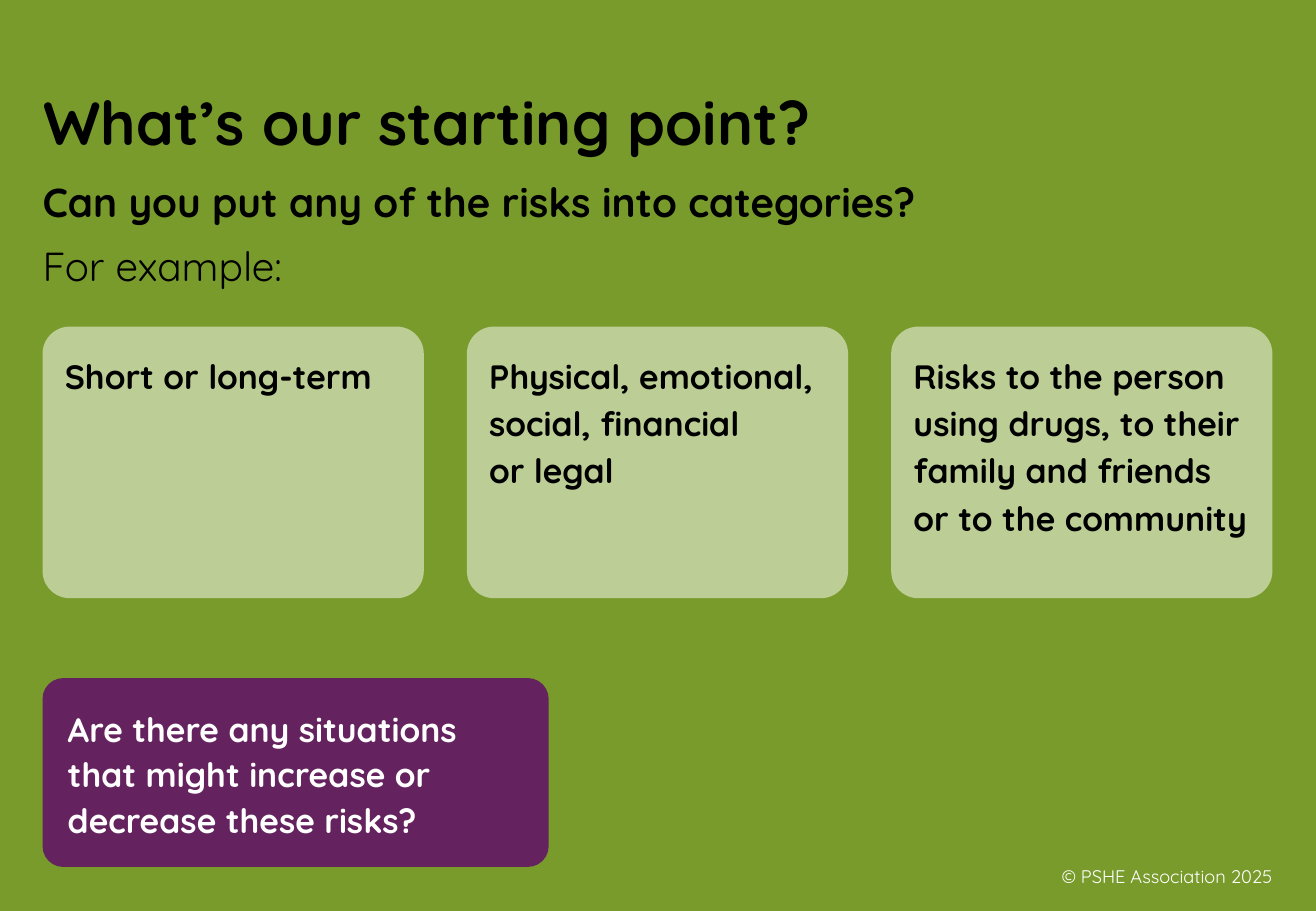
from dataclasses import dataclass

from pptx import Presentation
from pptx.dml.color import RGBColor
from pptx.enum.shapes import MSO_SHAPE as Preset
from pptx.enum.text import MSO_ANCHOR as Anchor, PP_ALIGN as Align
from pptx.shapes.autoshape import Shape
from pptx.slide import Slide
from pptx.util import Cm, Pt

GREEN = RGBColor(0x79, 0x9B, 0x2C)
PALE = RGBColor(0xBC, 0xCE, 0x96)
PURPLE = RGBColor(0x64, 0x23, 0x5E)
BLACK = RGBColor(0, 0, 0)
WHITE = RGBColor(0xFF, 0xFF, 0xFF)
FONT = "Quicksand"

LEFT = 0.89
CARD_WIDTH = 7.97
CARD_STEP = 8.87


@dataclass(frozen=True)
class Box:
    """Position and size in centimetres."""
    left: float
    top: float
    width: float
    height: float


@dataclass(frozen=True)
class Line:
    """A paragraph; each newline in its text is a line break."""
    text: str
    size: float
    color: RGBColor = BLACK
    bold: bool = True
    pitch: float | None = None
    before: float = 0
    align: Align = Align.LEFT


@dataclass(frozen=True)
class Panel:
    box: Box
    line: Line
    fill: RGBColor
    round: float
    inset: tuple[float, float, float, float]


def write(shape: Shape, lines: list[Line], anchor: Anchor) -> None:
    frame = shape.text_frame
    frame.word_wrap = True
    frame.vertical_anchor = anchor
    for index, line in enumerate(lines):
        para = frame.add_paragraph() if index else frame.paragraphs[0]
        para.alignment = line.align
        if line.pitch:
            para.line_spacing = Pt(line.pitch)
        if line.before:
            para.space_before = Pt(line.before)
        for row, text in enumerate(line.text.split("\n")):
            if row:
                para.add_line_break()
            run = para.add_run()
            run.text = text
            font = run.font
            font.name = FONT
            font.size = Pt(line.size)
            font.bold = line.bold
            font.color.rgb = line.color


def add_text(slide: Slide, box: Box, lines: list[Line], anchor: Anchor) -> None:
    shape = slide.shapes.add_textbox(
        Cm(box.left), Cm(box.top), Cm(box.width), Cm(box.height))
    write(shape, lines, anchor)


def add_panel(slide: Slide, panel: Panel) -> None:
    box = panel.box
    shape = slide.shapes.add_shape(
        Preset.ROUNDED_RECTANGLE,
        Cm(box.left), Cm(box.top), Cm(box.width), Cm(box.height))
    shape.adjustments[0] = panel.round
    shape.shadow.inherit = False
    shape.fill.solid()
    shape.fill.fore_color.rgb = panel.fill
    shape.line.fill.background()
    frame = shape.text_frame
    (frame.margin_left, frame.margin_top,
     frame.margin_right, frame.margin_bottom) = map(Cm, panel.inset)
    write(shape, [panel.line], Anchor.TOP)


def main() -> None:
    deck = Presentation()
    deck.slide_width = Cm(27.51)
    deck.slide_height = Cm(19.05)
    slide = deck.slides.add_slide(deck.slide_layouts[6])
    slide.background.fill.solid()
    slide.background.fill.fore_color.rgb = GREEN

    add_text(slide, Box(20.65, 17.81, 6.2, 1.02),
             [Line("© PSHE Association 2025", 10.8, WHITE, False,
                   align=Align.RIGHT)], Anchor.MIDDLE)
    add_text(slide, Box(0.66, 1.5, 26.2, 1.93),
             [Line("What’s our starting point?", 36, pitch=43)], Anchor.BOTTOM)
    add_text(slide, Box(0.64, 3.63, 23.75, 1.68), [
        Line("Can you put any of the risks into categories?", 24, pitch=27),
        Line("For example:", 24, bold=False, pitch=27, before=11),
    ], Anchor.TOP)

    cards = [
        "Short or long-term",
        "Physical, emotional, social, financial \nor legal",
        "Risks to the person using drugs, to their family and friends "
        "or to the community",
    ]
    for index, text in enumerate(cards):
        box = Box(LEFT + index * CARD_STEP, 6.83, CARD_WIDTH, 5.68)
        add_panel(slide, Panel(box, Line(text, 20, pitch=28), PALE, 0.1,
                               (0.3, 0.3, 0.3, 0.13)))

    prompt = Line("Are there any situations that might increase or decrease "
                  "these risks?", 20, WHITE, pitch=27)
    add_panel(slide, Panel(Box(LEFT, 14.18, 10.58, 3.95), prompt, PURPLE, 0.11,
                           (0.4, 0.4, 0.25, 0.1)))

    deck.save("out.pptx")


if __name__ == "__main__":
    main()
